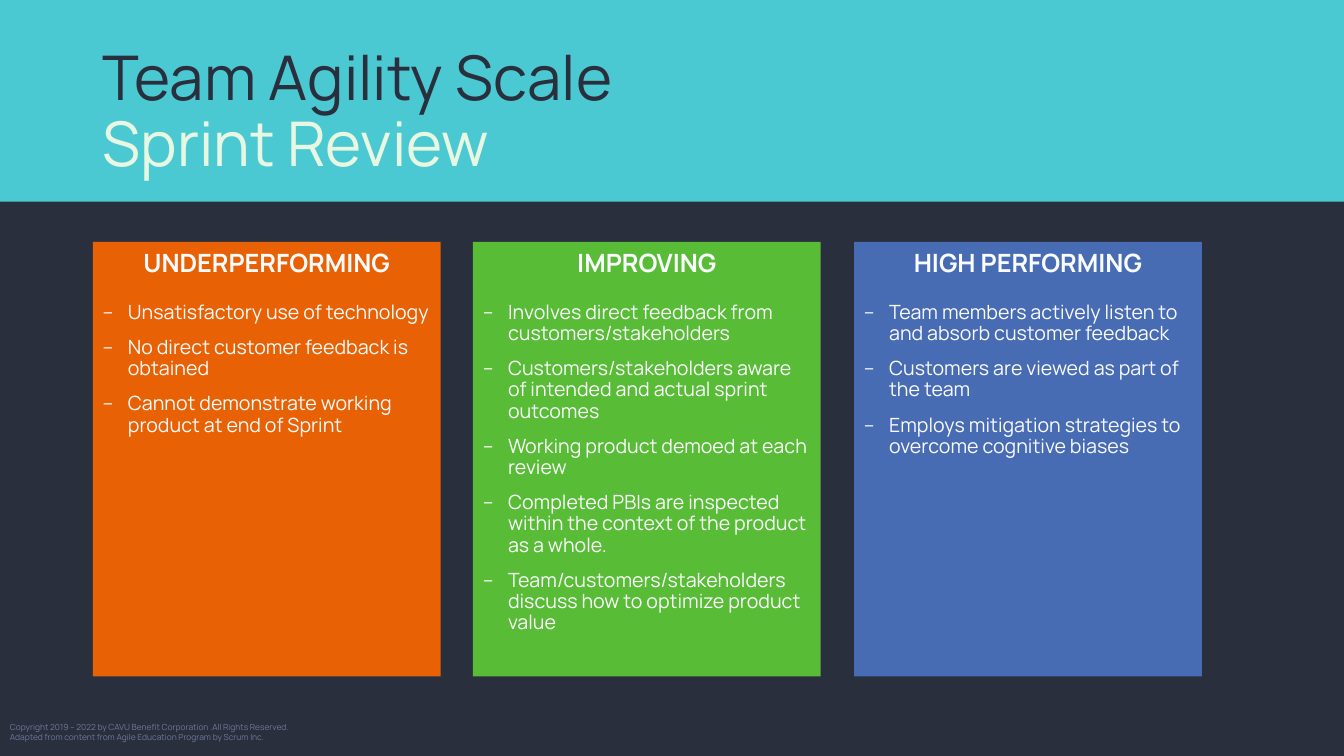
from lxml.etree import SubElement
from pptx import Presentation
from pptx.dml.color import RGBColor
from pptx.enum.shapes import MSO_SHAPE as Shape
from pptx.enum.text import MSO_ANCHOR as Anchor, PP_ALIGN as Align
from pptx.oxml.ns import qn
from pptx.util import Emu, Pt

PX = 9144  # 100 px to the inch
FONT = "Manrope"
COLORS = {
    "night": "2A2F3D", "teal": "4BC9D3", "mint": "E7F7E2",
    "slate": "6E7A9B", "white": "FAFBFD",
    "orange": "E86104", "green": "59BC36", "blue": "486CB4",
}
COLUMN_LEFTS = (92, 469, 847)
COLUMN_WIDTH = 345
HEADING_TOP, HEADING_HEIGHT, BODY_HEIGHT = 240, 40, 391

COLUMNS = [
    ("UNDERPERFORMING", "orange", [
        "Unsatisfactory use of technology",
        "No direct customer feedback is obtained",
        "Cannot demonstrate working product at end of Sprint",
    ]),
    ("IMPROVING", "green", [
        "Involves direct feedback from customers/stakeholders",
        "Customers/stakeholders aware of intended and actual sprint outcomes",
        "Working product demoed at each review",
        "Completed PBIs are inspected within the context of the product as a whole.",
        "Team/customers/stakeholders discuss how to optimize product value",
    ]),
    ("HIGH PERFORMING", "blue", [
        "Team members actively listen to and absorb customer feedback",
        "Customers are viewed as part of the team",
        "Employs mitigation strategies to overcome cognitive biases",
    ]),
]
COPYRIGHT = [
    "Copyright 2019 – 2022 by CAVU Benefit Corporation .All Rights Reserved.",
    "Adapted from content from Agile Education Program by Scrum Inc.",
]


def rgb(name):
    return RGBColor.from_string(COLORS[name])


def px(length):
    return Emu(length * PX)


def write(para, text, size, color="white", bold=False):
    """Add one formatted span to a paragraph."""
    span = para.add_run()
    span.text = text
    span.font.name = FONT
    span.font.size = Pt(size)
    span.font.bold = bold
    span.font.color.rgb = rgb(color)


class SlideBuilder:
    def __init__(self, width, height, background):
        self.deck = Presentation()
        self.deck.slide_width, self.deck.slide_height = px(width), px(height)
        self.page = self.deck.slides.add_slide(self.deck.slide_layouts[6])
        self.page.background.fill.solid()
        self.page.background.fill.fore_color.rgb = rgb(background)

    def panel(self, left, top, width, height, color):
        box = self.page.shapes.add_shape(
            Shape.RECTANGLE, px(left), px(top), px(width), px(height))
        box.shadow.inherit = False
        box.fill.solid()
        box.fill.fore_color.rgb = rgb(color)
        box.line.fill.background()
        box.text_frame.vertical_anchor = Anchor.TOP
        return box

    def text_box(self, left, top, width, height, anchor=Anchor.TOP):
        box = self.page.shapes.add_textbox(px(left), px(top), px(width), px(height))
        box.text_frame.word_wrap = True
        box.text_frame.vertical_anchor = anchor
        return box.text_frame

    def paragraphs(self, frame, count):
        return [frame.paragraphs[0]] + [frame.add_paragraph() for _ in range(count - 1)]

    def heading(self, left, text, color):
        box = self.panel(left, HEADING_TOP, COLUMN_WIDTH, HEADING_HEIGHT, color)
        para = box.text_frame.paragraphs[0]
        para.alignment = Align.CENTER
        write(para, text, 18, bold=True)

    def dash_list(self, left, items, color):
        box = self.panel(left, HEADING_TOP + HEADING_HEIGHT, COLUMN_WIDTH, BODY_HEIGHT, color)
        frame = box.text_frame
        frame.margin_top = px(20)
        for index, para in enumerate(self.paragraphs(frame, len(items))):
            para.alignment = Align.LEFT
            para.line_spacing = 0.9
            para.space_before = Pt(10 if index else 0)
            self.dash(para)
            write(para, items[index], 14)

    def dash(self, para):
        props = para._p.get_or_add_pPr()
        props.set("marL", str(px(25)))
        props.set("indent", str(-px(25)))
        bullet_color = SubElement(props, qn("a:buClr"))
        SubElement(bullet_color, qn("a:srgbClr"), val=COLORS["white"])
        SubElement(props, qn("a:buFont"), typeface=FONT)
        SubElement(props, qn("a:buChar"), char="–")


def main():
    builder = SlideBuilder(1333, 750, "night")

    # Title band
    builder.panel(0, 0, 1333, 200, "teal")
    title = builder.text_box(92, 40, 1150, 145, Anchor.MIDDLE).paragraphs[0]
    title.line_spacing = 0.9
    write(title, "Team Agility Scale", 44, "night")
    title.add_line_break()
    write(title, "Sprint Review", 44, "mint")

    # Rating columns
    for left, (name, color, items) in zip(COLUMN_LEFTS, COLUMNS):
        builder.heading(left, name, color)
        builder.dash_list(left, items, color)

    # Copyright
    footer = builder.text_box(0, 711, 450, 30)
    for para, line in zip(builder.paragraphs(footer, len(COPYRIGHT)), COPYRIGHT):
        write(para, line, 6, "slate")

    builder.deck.save("out.pptx")


if __name__ == "__main__":
    main()
